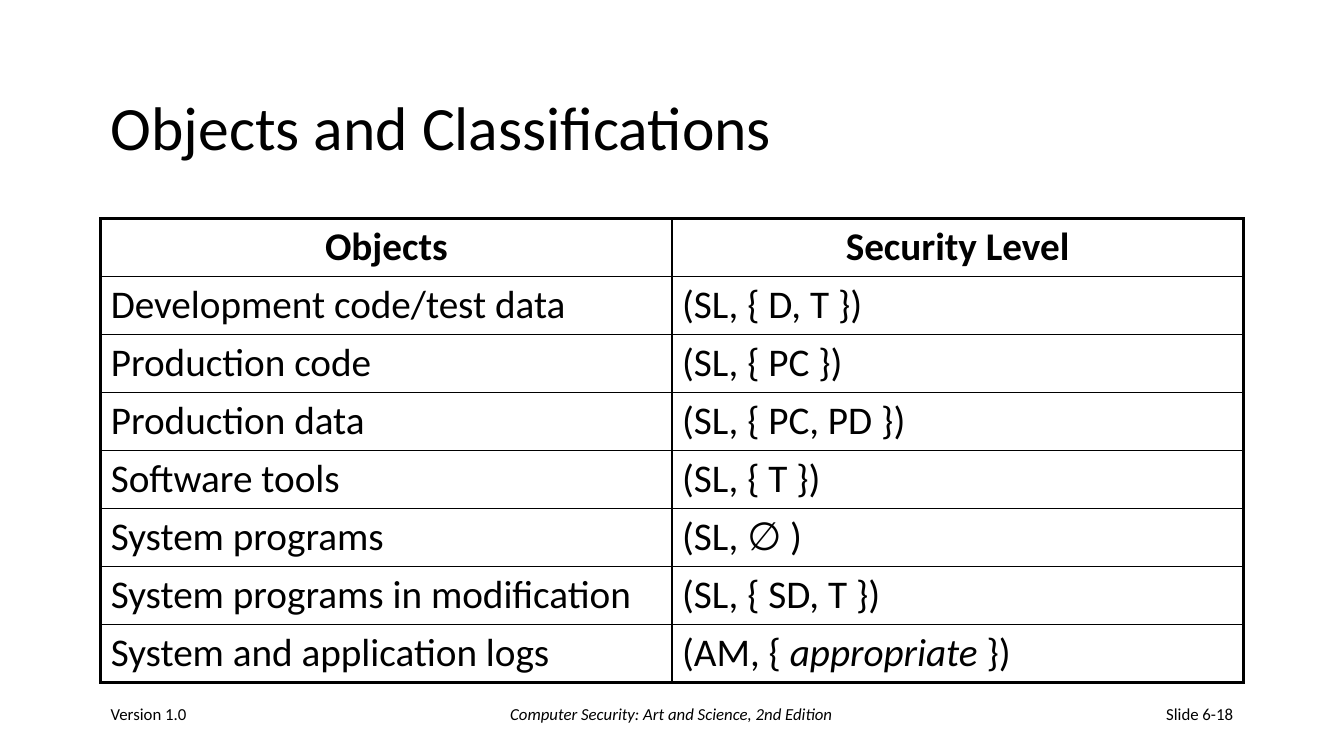
from pptx import Presentation
from pptx.dml.color import RGBColor
from pptx.enum.text import MSO_ANCHOR, PP_ALIGN
from pptx.oxml import parse_xml
from pptx.oxml.ns import nsdecls
from pptx.util import Pt

LEFT, CENTER, RIGHT = PP_ALIGN.LEFT, PP_ALIGN.CENTER, PP_ALIGN.RIGHT
MIDDLE = MSO_ANCHOR.MIDDLE

PX = 9525  # EMU per px, 96 px to the inch
FONT = "Calibri"
COLORS = {"text": "000000", "border": "000000"}
THIN, THICK = 1, 2.25  # border widths in points

HEADINGS = ("Objects", "Security Level")
# Asterisks enclose italic words
CLASSIFICATIONS = [
    ("Development code/test data", "(SL, { D, T })"),
    ("Production code", "(SL, { PC })"),
    ("Production data", "(SL, { PC, PD })"),
    ("Software tools", "(SL, { T })"),
    ("System programs", "(SL, ∅ )"),
    ("System programs in modification", "(SL, { SD, T })"),
    ("System and application logs", "(AM, { *appropriate* })"),
]


def emu(*lengths):
    return [round(length * PX) for length in lengths]


def write(paragraph, text, size, align=LEFT, bold=False):
    """Fill a paragraph, setting the words between asterisks in italics."""
    paragraph.alignment = align
    for index, part in enumerate(text.split("*")):
        if not part:
            continue
        run = paragraph.add_run()
        run.text = part
        font = run.font
        font.name, font.size = FONT, Pt(size)
        font.bold, font.italic = bold, index % 2 == 1
        font.color.rgb = RGBColor.from_string(COLORS["text"])


def add_title(slide, box, text):
    title = slide.shapes.title
    title.left, title.top, title.width, title.height = emu(*box)
    frame = title.text_frame
    frame.word_wrap = True
    frame.vertical_anchor = MIDDLE
    write(frame.paragraphs[0], text, 44)
    frame.paragraphs[0].line_spacing = 0.9


def set_borders(cell, widths):
    """Draw the left, right, top and bottom borders of a cell."""
    properties = cell._tc.get_or_add_tcPr()
    for side, width in zip("LRTB", widths):
        properties.append(parse_xml(
            f'<a:ln{side} {nsdecls("a")} w="{Pt(width)}"><a:solidFill>'
            f'<a:srgbClr val="{COLORS["border"]}"/></a:solidFill></a:ln{side}>'))


def add_classifications(slide, box):
    rows = [HEADINGS, *CLASSIFICATIONS]
    last_row, last_column = len(rows) - 1, len(HEADINGS) - 1
    table = slide.shapes.add_table(len(rows), len(HEADINGS), *emu(*box)).table
    for r, row in enumerate(rows):
        for c, text in enumerate(row):
            cell = table.cell(r, c)
            outer = (c == 0, c == last_column, r == 0, r == last_row)
            set_borders(cell, [THICK if edge else THIN for edge in outer])
            cell.fill.background()
            write(cell.text_frame.paragraphs[0], text, 28,
                  CENTER if r == 0 else LEFT, bold=r == 0)


def add_footer(slide, box):
    left, top, width, height = box
    side, middle = 267, 405
    parts = [
        ("Version 1.0", left, side, LEFT),
        ("*Computer Security: Art and Science, 2nd Edition*",
         left + (width - middle) // 2, middle, CENTER),
        ("Slide 6-18", left + width - side, side, RIGHT),
    ]
    for text, x, part_width, align in parts:
        frame = slide.shapes.add_textbox(
            *emu(x, top, part_width, height)).text_frame
        frame.word_wrap = True
        frame.vertical_anchor = MIDDLE
        write(frame.paragraphs[0], text, 12, align)


def main():
    deck = Presentation()
    deck.slide_width, deck.slide_height = emu(1280, 720)
    slide = deck.slides.add_slide(deck.slide_layouts[5])
    add_title(slide, (96, 64, 1088, 120), "Objects and Classifications")
    add_classifications(slide, (96, 208, 1088, 432))
    add_footer(slide, (96, 656, 1088, 48))
    deck.save("out.pptx")


if __name__ == "__main__":
    main()
